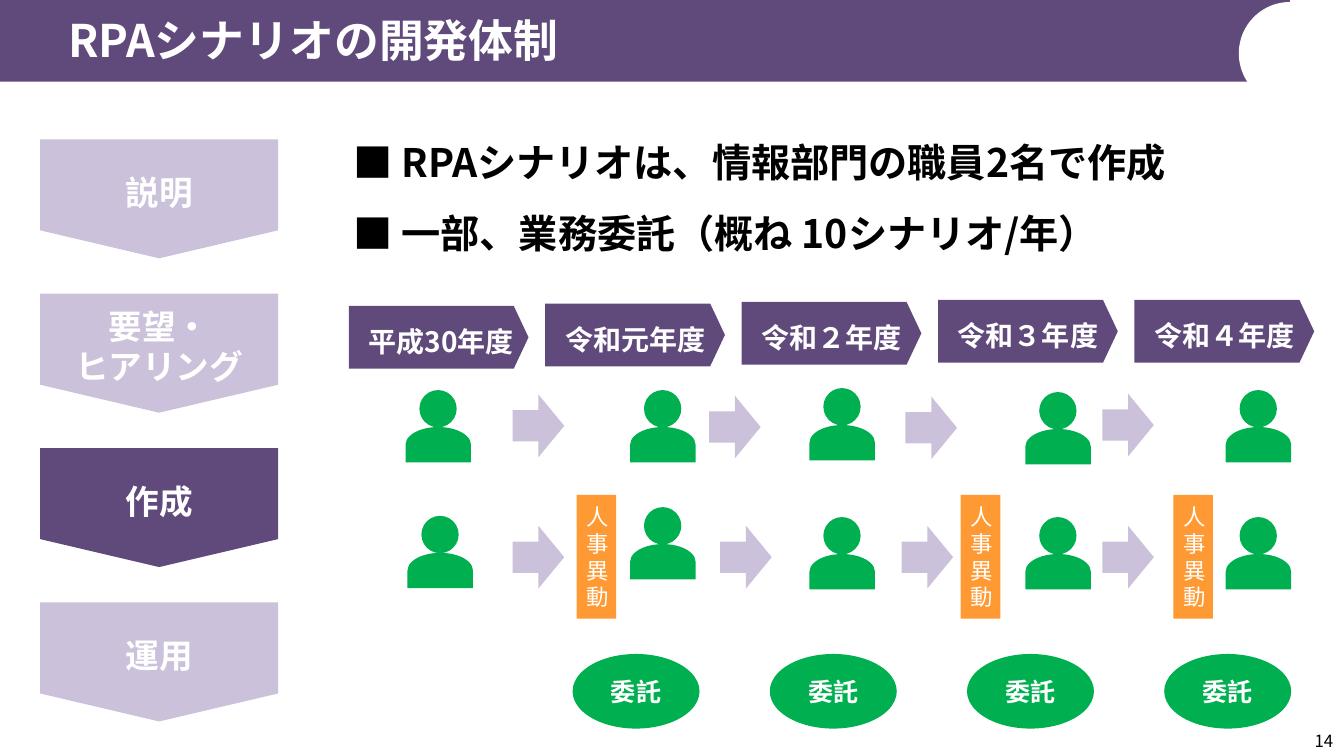
import pptx
import pptx.dml.color
import pptx.enum.shapes
import pptx.enum.text
import pptx.util
from lxml import etree
from pptx.oxml.ns import qn

Cm = pptx.util.Cm
RGBColor = pptx.dml.color.RGBColor
Shape = pptx.enum.shapes.MSO_SHAPE
Align = pptx.enum.text.PP_ALIGN
Anchor = pptx.enum.text.MSO_ANCHOR

PURPLE = RGBColor(0x60, 0x4A, 0x7B)
LILAC = RGBColor(0xCC, 0xC1, 0xDA)
GREEN = RGBColor(0x00, 0xB0, 0x50)
ORANGE = RGBColor(0xFF, 0x99, 0x33)
WHITE = RGBColor(0xFF, 0xFF, 0xFF)
BLACK = RGBColor(0x00, 0x00, 0x00)
FONT = "Noto Sans CJK JP"

YEAR_STEP = 4.95
YEARS = [("平成30年度", 7.71), ("令和元年度", 7.65), ("令和２年度", 7.61),
         ("令和３年度", 7.56), ("令和４年度", 7.56)]
STAGES = ["説明", "要望・\nヒアリング", "作成", "運用"]
CURRENT_STAGE = "作成"
STAFF = [(10.57, 9.83), (16.23, 9.83), (20.75, 9.78), (26.19, 9.88), (31.24, 9.83),
         (10.62, 13), (16.23, 12.78), (20.75, 13.03), (26.19, 13.03), (31.24, 13.03)]
HANDOVERS = [(12.78, 10.08), (17.73, 10.11), (22.68, 10.13), (27.64, 10.06),
             (12.78, 13.39), (18.01, 13.39), (22.58, 13.39), (27.64, 13.39)]
TRANSFERS = [14.53, 24.21, 29.57]


def write(frame, text, size, color=WHITE, bold=True, align=Align.CENTER,
          anchor=Anchor.MIDDLE, margins=None, wrap=True, spacing=None):
    """Fill a text frame, one paragraph per line; margins are cm: left, top, right, bottom."""
    frame.word_wrap = wrap
    frame.vertical_anchor = anchor
    if margins is not None:
        (frame.margin_left, frame.margin_top,
         frame.margin_right, frame.margin_bottom) = map(Cm, margins)
    frame.text = text
    for paragraph in frame.paragraphs:
        paragraph.alignment = align
        if spacing:
            paragraph.line_spacing = spacing
        for run in paragraph.runs:
            run.font.size = pptx.util.Pt(size)
            run.font.bold = bold
            run.font.color.rgb = color
            run.font.name = FONT
            etree.SubElement(run._r.get_or_add_rPr(), qn("a:ea"), typeface=FONT)


class StaffingSlide:
    def __init__(self, presentation):
        self.slide = presentation.slides.add_slide(presentation.slide_layouts[5])
        self.shapes = self.slide.shapes

    def block(self, preset, left, top, width, height, fill, rotation=0, parent=None):
        block = (parent or self.shapes).add_shape(
            preset, Cm(left), Cm(top), Cm(width), Cm(height))
        block.shadow.inherit = False
        block.fill.solid()
        block.fill.fore_color.rgb = fill
        block.line.fill.background()
        block.rotation = rotation
        return block

    def header(self, text):
        self.block(Shape.RECTANGLE, 0, 0, 32.51, 2.06, PURPLE)
        self.block(Shape.OVAL, 31.22, 0.05, 2.59, 2.59, WHITE)
        title = self.shapes.title
        title.left, title.top, title.width, title.height = map(Cm, (0, 0, 32.46, 2.01))
        title.text_frame.auto_size = pptx.enum.text.MSO_AUTO_SIZE.NONE
        write(title.text_frame, text, 32, align=Align.LEFT, margins=(1.72, 0.1, 0.1, 0.1))
        # The title has to lie in front of the header band.
        self.shapes._spTree.append(title._element)

    def text(self, text, left, top, width, height, **style):
        box = self.shapes.add_textbox(Cm(left), Cm(top), Cm(width), Cm(height))
        write(box.text_frame, text, color=BLACK, anchor=Anchor.TOP, **style)

    def stage(self, text, top):
        fill = PURPLE if text == CURRENT_STAGE else LILAC
        stage = self.block(Shape.PENTAGON, 2.51, top, 3, 6, fill, rotation=90)
        stage.adjustments[0] = 0.235
        write(stage.text_frame, text, 24, margins=(0.2, 0.2, 0.2, 0.2), wrap=False)
        stage.text_frame._txBody.bodyPr.set("vert", "vert270")

    def year(self, text, left, top):
        year = self.block(Shape.PENTAGON, left, top, 4.53, 1.58, PURPLE)
        year.adjustments[0] = 0.235
        write(year.text_frame, text, 20, align=Align.LEFT, spacing=1.5,
              margins=(0.5, 0, 0.2, 0.2), wrap=False)

    def person(self, left, top):
        person = self.shapes.add_group_shape().shapes
        self.block(Shape.OVAL, left, top, 0.94, 0.94, GREEN, parent=person)
        self.block(Shape.FLOWCHART_DELAY, left + 0.03, top + 0.55, 0.89, 1.65, GREEN,
                   rotation=270, parent=person)

    def handover(self, left, top):
        self.block(Shape.DOWN_ARROW, left, top, 1.58, 1.3, LILAC, rotation=270)

    def transfer(self, left):
        transfer = self.block(Shape.RECTANGLE, left, 12.47, 1, 3.12, ORANGE)
        write(transfer.text_frame, "人事異動", 16, bold=False)

    def outsourcing(self, left):
        outsourcing = self.block(Shape.OVAL, left, 16.48, 3.2, 1.88, GREEN)
        write(outsourcing.text_frame, "委託", 18, margins=(0, 0, 0, 0))


def main():
    presentation = pptx.Presentation()
    presentation.slide_width = Cm(33.87)
    presentation.slide_height = Cm(19.05)
    slide = StaffingSlide(presentation)

    slide.header("RPAシナリオの開発体制")
    slide.text("■ RPAシナリオは、情報部門の職員2名で作成\n■ 一部、業務委託（概ね 10シナリオ/年）",
               8.66, 2.77, 24.16, 3.53, size=28, align=Align.LEFT, spacing=1.5)
    for row, stage in enumerate(STAGES):
        slide.stage(stage, 2.01 + 3.89 * row)
    for column, (year, top) in enumerate(YEARS):
        slide.year(year, 8.79 + YEAR_STEP * column, top)
    for left, top in STAFF:
        slide.person(left, top)
    for left, top in HANDOVERS:
        slide.handover(left, top)
    for left in TRANSFERS:
        slide.transfer(left)
    for column in range(4):
        slide.outsourcing(14.43 + 4.97 * column)
    slide.text("14", 31.67, 18.29, 2.18, 0.76, size=12, bold=False, align=Align.RIGHT)

    presentation.save("out.pptx")


if __name__ == "__main__":
    main()
